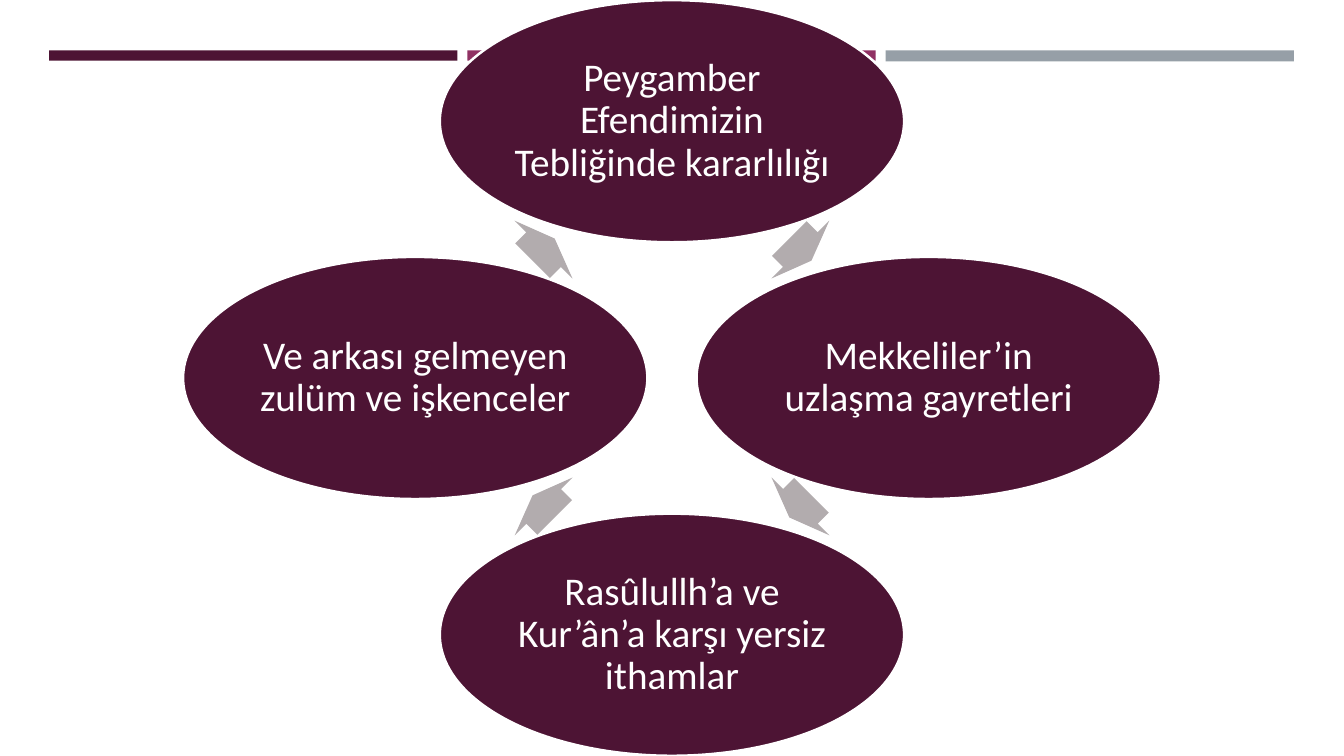
from pptx import Presentation
from pptx.dml.color import RGBColor
from pptx.enum.shapes import MSO_SHAPE
from pptx.enum.text import MSO_ANCHOR, PP_ALIGN
from pptx.util import Cm, Pt

RECTANGLE = MSO_SHAPE.RECTANGLE
OVAL = MSO_SHAPE.OVAL
ARROW = MSO_SHAPE.RIGHT_ARROW
MIDDLE = MSO_ANCHOR.MIDDLE
CENTER = PP_ALIGN.CENTER

PLUM, MAGENTA, SLATE = "4D1434", "903163", "969FA7"
ARROW_GREY, WHITE = "B2ACAE", "FFFFFF"

SLIDE_WIDTH, SLIDE_HEIGHT = 33.87, 19.05
CENTER_X, CENTER_Y = SLIDE_WIDTH / 2, SLIDE_HEIGHT / 2
CYCLE_RADIUS = 6.47
STAGE_WIDTH, STAGE_HEIGHT = 11.7, 6.1
ARROW_LENGTH, ARROW_SPAN = 0.79, 2.06
BAR_LEFT, BAR_TOP, BAR_WIDTH, BAR_PITCH = 1.24, 1.27, 10.29, 10.54

BARS = [(PLUM, 0.26), (MAGENTA, 0.26), (SLATE, 0.28)]
STAGES = [
    ("Peygamber Efendimizin Tebliğinde kararlılığı", 0, -1),
    ("Mekkeliler’in uzlaşma gayretleri", 1, 0),
    ("Rasûlullh’a ve Kur’ân’a karşı yersiz ithamlar", 0, 1),
    ("Ve arkası gelmeyen zulüm ve işkenceler", -1, 0),
]
FRAME_FORMAT = {
    "word_wrap": True,
    "vertical_anchor": MIDDLE,
    "margin_left": Cm(0.1),
    "margin_right": Cm(0.1),
    "margin_top": Cm(0.1),
    "margin_bottom": Cm(0.1),
}
PARAGRAPH_FORMAT = {"alignment": CENTER, "line_spacing": 0.9}
FONT_FORMAT = {"name": "Calibri", "size": Pt(28)}


def set_color(color_format, hex_string):
    color_format.rgb = RGBColor.from_string(hex_string)


def apply_format(target, values):
    for attribute, value in values.items():
        setattr(target, attribute, value)


def add_filled(slide, preset, left, top, width, height, color):
    shape = slide.shapes.add_shape(preset, Cm(left), Cm(top), Cm(width), Cm(height))
    shape.shadow.inherit = False
    shape.fill.solid()
    set_color(shape.fill.fore_color, color)
    shape.line.fill.background()
    return shape


def add_centered(slide, preset, x, y, width, height, color):
    return add_filled(slide, preset, x - width / 2, y - height / 2, width, height, color)


def add_stage(slide, wording, x, y):
    stage = add_centered(slide, OVAL, x, y, STAGE_WIDTH, STAGE_HEIGHT, PLUM)
    stage.line.fill.solid()
    set_color(stage.line.fill.fore_color, WHITE)
    stage.line.width = Pt(1.75)
    frame = stage.text_frame
    apply_format(frame, FRAME_FORMAT)
    paragraph = frame.paragraphs[0]
    apply_format(paragraph, PARAGRAPH_FORMAT)
    run = paragraph.add_run()
    run.text = wording
    apply_format(run.font, FONT_FORMAT)
    set_color(run.font.color, WHITE)


def add_cycle_arrow(slide, x, y, rotation):
    arrow = add_centered(slide, ARROW, x, y, ARROW_LENGTH, ARROW_SPAN, ARROW_GREY)
    arrow.adjustments[0] = 0.6
    arrow.adjustments[1] = 0.5
    arrow.rotation = rotation


def add_header_bars(slide):
    for index, (color, height) in enumerate(BARS):
        left = BAR_LEFT + index * BAR_PITCH
        add_filled(slide, RECTANGLE, left, BAR_TOP, BAR_WIDTH, height, color)


def add_cycle(slide):
    for index, (wording, across, down) in enumerate(STAGES):
        next_across, next_down = STAGES[(index + 1) % len(STAGES)][1:]
        add_stage(slide, wording, CENTER_X + across * CYCLE_RADIUS,
                  CENTER_Y + down * CYCLE_RADIUS)
        add_cycle_arrow(slide, CENTER_X + (across + next_across) * CYCLE_RADIUS / 2,
                        CENTER_Y + (down + next_down) * CYCLE_RADIUS / 2,
                        45 + 90 * index)


def main():
    presentation = Presentation()
    presentation.slide_width = Cm(SLIDE_WIDTH)
    presentation.slide_height = Cm(SLIDE_HEIGHT)
    slide = presentation.slides.add_slide(presentation.slide_layouts[6])
    add_header_bars(slide)
    add_cycle(slide)
    presentation.save("out.pptx")


if __name__ == "__main__":
    main()
